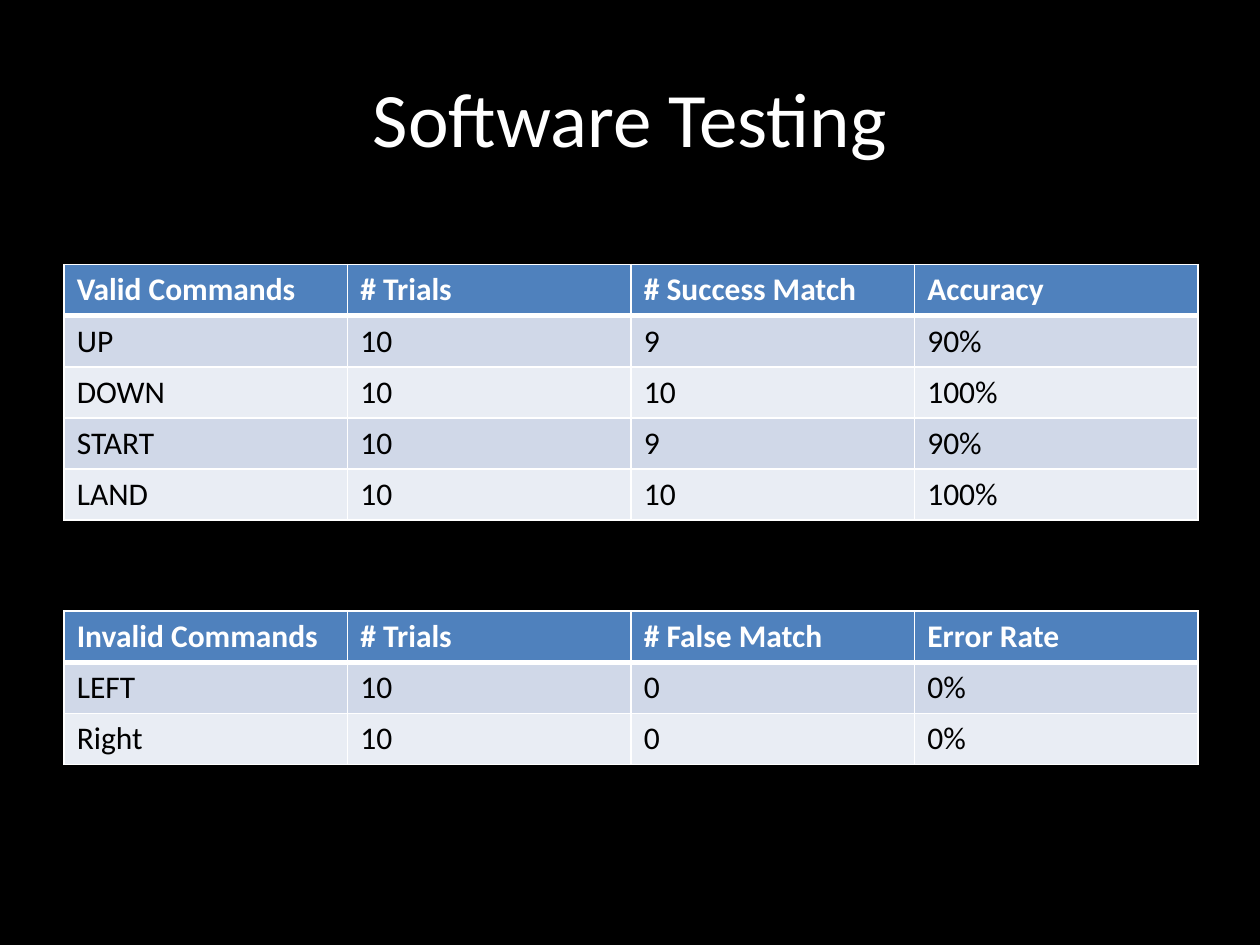
from dataclasses import dataclass

from lxml import etree
from pptx import Presentation
from pptx.dml.color import RGBColor
from pptx.enum.text import MSO_ANCHOR, PP_ALIGN
from pptx.oxml.ns import qn
from pptx.slide import Slide
from pptx.table import _Cell
from pptx.util import Inches, Pt

CENTER = PP_ALIGN.CENTER
MIDDLE = MSO_ANCHOR.MIDDLE

BLACK = RGBColor(0x00, 0x00, 0x00)
WHITE = RGBColor(0xFF, 0xFF, 0xFF)
HEADER_BLUE = RGBColor(0x4F, 0x81, 0xBD)
BANDS = (RGBColor(0xD0, 0xD8, 0xE8), RGBColor(0xE9, 0xED, 0xF4))

FONT = "Calibri"
TABLE_LEFT = 0.51
COL_WIDTH = 2.25
ROW_HEIGHT = 0.405
THIN, THICK = 1, 3


@dataclass(frozen=True)
class ResultTable:
    top: float
    header: tuple[str, ...]
    rows: tuple[tuple[str, ...], ...]


RESULT_TABLES = (
    ResultTable(
        2.1,
        ("Valid Commands", "# Trials", "# Success Match", "Accuracy"),
        (
            ("UP", "10", "9", "90%"),
            ("DOWN", "10", "10", "100%"),
            ("START", "10", "9", "90%"),
            ("LAND", "10", "10", "100%"),
        ),
    ),
    ResultTable(
        4.85,
        ("Invalid Commands", "# Trials", "# False Match", "Error Rate"),
        (
            ("LEFT", "10", "0", "0%"),
            ("Right", "10", "0", "0%"),
        ),
    ),
)


def add_run(p, text: str, size: int, color: RGBColor, bold: bool = False) -> None:
    r = p.add_run()
    r.text = text
    r.font.name = FONT
    r.font.size = Pt(size)
    r.font.bold = bold
    r.font.color.rgb = color


def set_borders(cell: _Cell, top: int, bottom: int) -> None:
    """Draw white borders; call before filling, as the schema puts lines first."""
    tcPr = cell._tc.get_or_add_tcPr()
    for side, width in (("L", THIN), ("R", THIN), ("T", top), ("B", bottom)):
        ln = etree.SubElement(tcPr, qn(f"a:ln{side}"), w=str(Pt(width)))
        fill = etree.SubElement(ln, qn("a:solidFill"))
        etree.SubElement(fill, qn("a:srgbClr"), val=str(WHITE))


def add_result_table(s: Slide, spec: ResultTable) -> None:
    lines = (spec.header, *spec.rows)
    n_rows, n_cols = len(lines), len(spec.header)
    table = s.shapes.add_table(
        n_rows, n_cols, Inches(TABLE_LEFT), Inches(spec.top),
        Inches(COL_WIDTH * n_cols), Inches(ROW_HEIGHT * n_rows),
    ).table
    for i, line in enumerate(lines):
        is_header = i == 0
        for j, text in enumerate(line):
            cell = table.cell(i, j)
            set_borders(cell, THICK if i == 1 else THIN, THICK if is_header else THIN)
            cell.fill.solid()
            cell.fill.fore_color.rgb = HEADER_BLUE if is_header else BANDS[(i - 1) % 2]
            p = cell.text_frame.paragraphs[0]
            add_run(p, text, 18, WHITE if is_header else BLACK, is_header)


def add_title(s: Slide, text: str) -> None:
    title = s.shapes.title
    title.left, title.top = Inches(0.5), Inches(0.3)
    title.width, title.height = Inches(9), Inches(1.25)
    tf = title.text_frame
    tf.vertical_anchor = MIDDLE
    p = tf.paragraphs[0]
    p.alignment = CENTER
    add_run(p, text, 44, WHITE)


def main() -> None:
    prs = Presentation()
    prs.slide_width, prs.slide_height = Inches(10), Inches(7.5)
    s = prs.slides.add_slide(prs.slide_layouts.get_by_name("Title Only"))
    s.background.fill.solid()
    s.background.fill.fore_color.rgb = BLACK
    add_title(s, "Software Testing")
    for spec in RESULT_TABLES:
        add_result_table(s, spec)
    prs.save("out.pptx")


if __name__ == "__main__":
    main()
